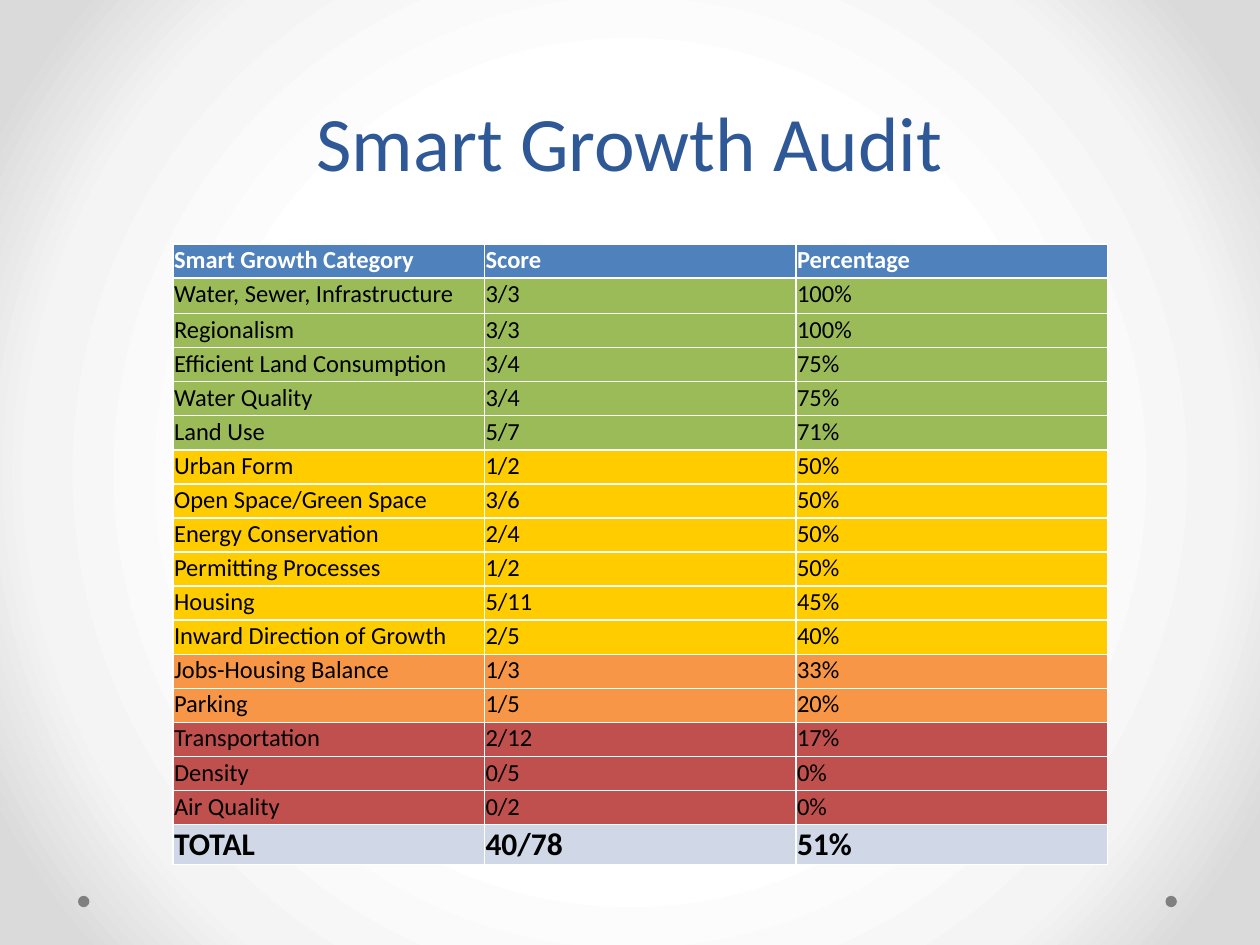
from lxml import etree
from pptx import Presentation
from pptx.dml.color import RGBColor
from pptx.enum.shapes import MSO_SHAPE
from pptx.enum.text import MSO_ANCHOR, PP_ALIGN
from pptx.oxml import parse_xml
from pptx.oxml.ns import nsdecls, qn
from pptx.util import Pt

OVAL = MSO_SHAPE.OVAL
CENTER, LEFT = PP_ALIGN.CENTER, PP_ALIGN.LEFT
BOTTOM = MSO_ANCHOR.BOTTOM

TITLE = "Smart Growth Audit"
HEADER = ("Smart Growth Category", "Score", "Percentage")
TOTAL = ("TOTAL", "40/78", "51%")

# Audit results, grouped by the colour of their rating
RATINGS = [
    ("9BBB59", [
        ("Water, Sewer, Infrastructure", "3/3", "100%"),
        ("Regionalism", "3/3", "100%"),
        ("Efficient Land Consumption", "3/4", "75%"),
        ("Water Quality", "3/4", "75%"),
        ("Land Use", "5/7", "71%"),
    ]),
    ("FFCC00", [
        ("Urban Form", "1/2", "50%"),
        ("Open Space/Green Space", "3/6", "50%"),
        ("Energy Conservation", "2/4", "50%"),
        ("Permitting Processes", "1/2", "50%"),
        ("Housing", "5/11", "45%"),
        ("Inward Direction of Growth", "2/5", "40%"),
    ]),
    ("F79646", [
        ("Jobs-Housing Balance", "1/3", "33%"),
        ("Parking", "1/5", "20%"),
    ]),
    ("C0504D", [
        ("Transportation", "2/12", "17%"),
        ("Density", "0/5", "0%"),
        ("Air Quality", "0/2", "0%"),
    ]),
]

BACKGROUND_STOPS = [(50, "FFFFFF"), (76, "F4F4F4"), (92, "DADADA")]
DOT_LEFTS = (666, 44.6)
DOT_TOP, DOT_SIZE = 511.9, 6.5
TABLE_LEFT, TABLE_TOP, COLUMN_WIDTH = 98.8, 139.5, 178
ROW_HEIGHT, FIRST_RESULT_HEIGHT, TOTAL_HEIGHT = 19.5, 20.2, 22.7


def color(value):
    return RGBColor.from_string(value)


def write(frame, text, size=14, ink="000000", bold=False, align=LEFT, spacing=None):
    para = frame.paragraphs[0]
    para.alignment = align
    if spacing:
        para.line_spacing = Pt(spacing)
    span = para.add_run()
    span.text = text
    span.font.name = "Calibri"
    span.font.size = Pt(size)
    span.font.bold = bold
    span.font.color.rgb = color(ink)


def paint_background(page):
    fill = page.background.fill
    fill.gradient()
    gradient = page.element.find(".//" + qn("a:gradFill"))
    for child in list(gradient):
        gradient.remove(child)
    stops = etree.SubElement(gradient, qn("a:gsLst"))
    for position, value in BACKGROUND_STOPS:
        stop = etree.SubElement(stops, qn("a:gs"), pos=str(position * 1000))
        etree.SubElement(stop, qn("a:srgbClr"), val=value)
    circle = etree.SubElement(gradient, qn("a:path"), path="circle")
    etree.SubElement(circle, qn("a:fillToRect"), l="50000", t="50000", r="50000", b="50000")


def add_borders(cell, top, bottom):
    widths = {"lnL": 1, "lnR": 1, "lnT": top, "lnB": bottom}
    properties = cell._tc.get_or_add_tcPr()
    for index, (side, width) in enumerate(widths.items()):
        properties.insert(index, parse_xml(
            f'<a:{side} {nsdecls("a")} w="{Pt(width)}"><a:solidFill>'
            f'<a:srgbClr val="FFFFFF"/></a:solidFill></a:{side}>'))


def add_dot(page, left):
    dot = page.shapes.add_shape(OVAL, Pt(left), Pt(DOT_TOP), Pt(DOT_SIZE), Pt(DOT_SIZE))
    dot.shadow.inherit = False
    dot.fill.solid()
    dot.fill.fore_color.rgb = color("808080")
    dot.line.fill.background()


def add_title(page):
    box = page.shapes.add_textbox(Pt(36), Pt(35.3), Pt(648), Pt(75))
    box.text_frame.word_wrap = True
    box.text_frame.vertical_anchor = BOTTOM
    write(box.text_frame, TITLE, size=44, ink="2F5897", align=CENTER, spacing=58)


def add_audit_table(page):
    # Every row as its values, fill, height and text format
    rows = [(HEADER, "4F81BD", ROW_HEIGHT, {"ink": "FFFFFF", "bold": True})]
    rows += [(result, fill, ROW_HEIGHT, {}) for fill, results in RATINGS for result in results]
    rows[1] = (*rows[1][:2], FIRST_RESULT_HEIGHT, {})
    rows.append((TOTAL, "D0D8E8", TOTAL_HEIGHT, {"size": 18, "bold": True}))

    table = page.shapes.add_table(
        len(rows), len(HEADER), Pt(TABLE_LEFT), Pt(TABLE_TOP),
        Pt(COLUMN_WIDTH * len(HEADER)), Pt(sum(row[2] for row in rows))).table
    table.horz_banding = False
    for column in table.columns:
        column.width = Pt(COLUMN_WIDTH)

    for index, (values, fill, height, text_format) in enumerate(rows):
        table.rows[index].height = Pt(height)
        for cell, value in zip(table.rows[index].cells, values):
            cell.margin_left = cell.margin_right = cell.margin_top = Pt(0.7)
            cell.margin_bottom = Pt(0)
            cell.fill.solid()
            cell.fill.fore_color.rgb = color(fill)
            add_borders(cell, top=1.5 if index == 1 else 1, bottom=1.5 if index == 0 else 1)
            write(cell.text_frame, value, **text_format)


def main():
    deck = Presentation()
    deck.slide_width, deck.slide_height = Pt(720), Pt(540)
    page = deck.slides.add_slide(deck.slide_layouts[6])
    paint_background(page)
    for left in DOT_LEFTS:
        add_dot(page, left)
    add_title(page)
    add_audit_table(page)
    deck.save("out.pptx")


if __name__ == "__main__":
    main()
